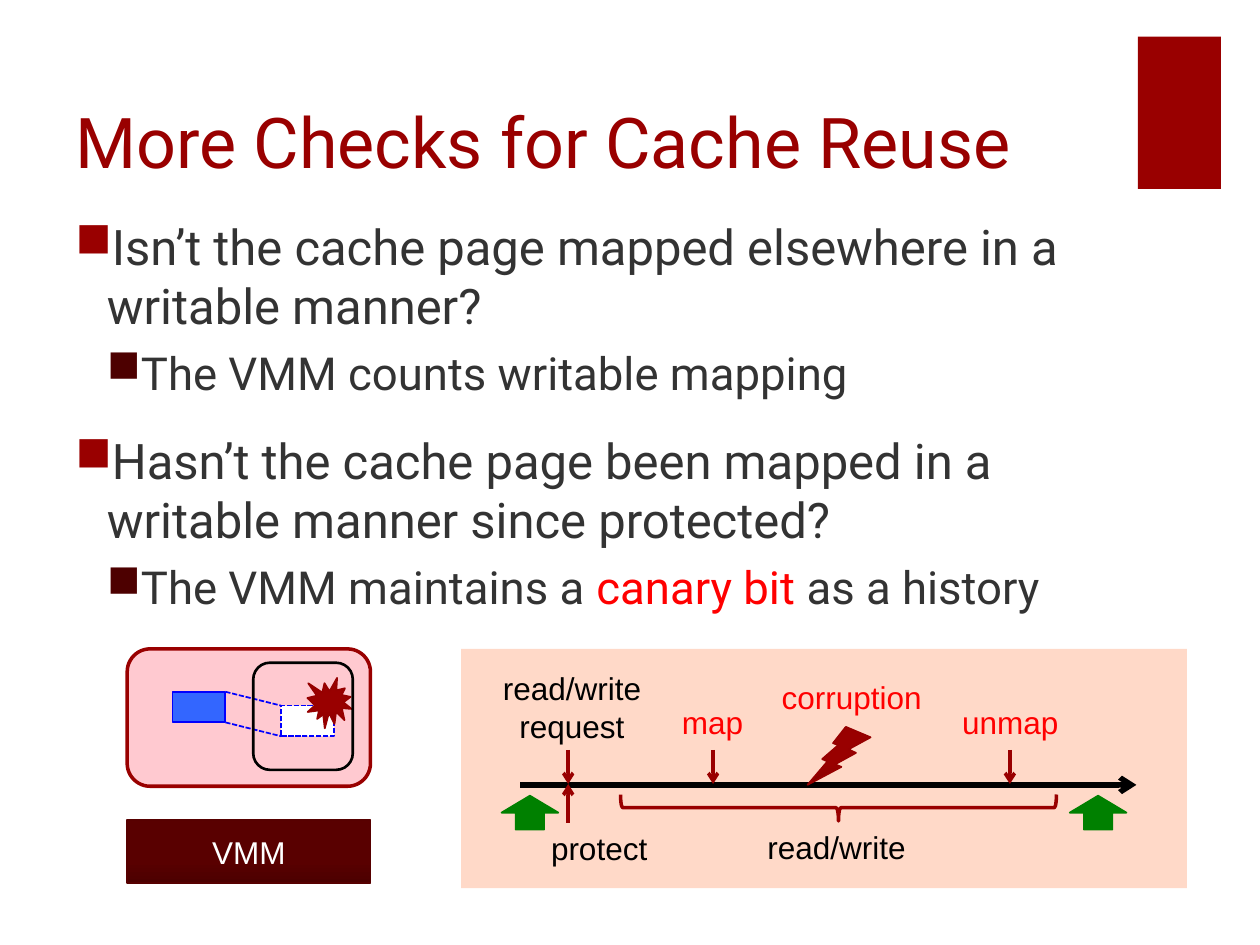
from dataclasses import dataclass
from typing import Optional

import pptx
import pptx.dml.color
import pptx.enum.dml
import pptx.enum.shapes
import pptx.enum.text
import pptx.oxml
import pptx.oxml.ns
import pptx.util

Pt = pptx.util.Pt
SHAPE = pptx.enum.shapes.MSO_SHAPE
ANCHOR = pptx.enum.text.MSO_ANCHOR
ALIGN = pptx.enum.text.PP_ALIGN
DASH = pptx.enum.dml.MSO_LINE.SQUARE_DOT  # written as sysDash

COLORS = {
    "crimson": "990000", "crimson_dark": "830000", "crimson_edge": "960000",
    "maroon": "590000", "maroon_dark": "4C0000", "maroon_edge": "570000",
    "sub_bullet": "4D0000", "body": "333333", "red": "FF0000",
    "black": "000000", "white": "FFFFFF", "pink": "FFC9D0", "peach": "FFD9C8",
    "page": "3366FF", "blue": "0000FF", "green": "008000",
}


@dataclass
class Box:
    left: float
    top: float
    width: float
    height: float

    def emu(self) -> tuple:
        return Pt(self.left), Pt(self.top), Pt(self.width), Pt(self.height)


@dataclass
class Point:
    text: str
    level: int = 0
    highlight: str = ""
    rest: str = ""


@dataclass
class Label:
    text: str
    center: float
    top: float
    color: str = "black"


@dataclass
class Line:
    x1: float
    y1: float
    x2: float
    y2: float
    color: str = "crimson"
    weight: float = 2
    arrow: bool = True


def rgb(name: str) -> pptx.dml.color.RGBColor:
    return pptx.dml.color.RGBColor.from_string(COLORS[name])


def add_run(paragraph, text: str, *, size: float, color: str, font: str = "Arial") -> None:
    run = paragraph.add_run()
    run.text = text
    run.font.size = Pt(size)
    run.font.name = font
    run.font.color.rgb = rgb(color)


def add_shape(slide, kind, box: Box, fill=None, line: Optional[str] = None,
              weight: float = 1, dash=None):
    """Draw a preset shape; a pair of colours as fill makes a gradient."""
    shape = slide.shapes.add_shape(kind, *box.emu())
    shape.shadow.inherit = False
    if fill is None:
        shape.fill.background()
    elif isinstance(fill, tuple):
        shape.fill.gradient()
        shape.fill.gradient_angle = 90
        for stop, color, position in zip(shape.fill.gradient_stops, fill, (0, 0.35)):
            stop.color.rgb = rgb(color)
            stop.position = position
    else:
        shape.fill.solid()
        shape.fill.fore_color.rgb = rgb(fill)
    if line is None:
        shape.line.fill.background()
    else:
        shape.line.color.rgb = rgb(line)
        shape.line.width = Pt(weight)
        shape.line.dash_style = dash
    return shape


def add_line(slide, line: Line, dash=None) -> None:
    connector = slide.shapes.add_connector(
        pptx.enum.shapes.MSO_CONNECTOR.STRAIGHT,
        Pt(line.x1), Pt(line.y1), Pt(line.x2), Pt(line.y2))
    connector.line.color.rgb = rgb(line.color)
    connector.line.width = Pt(line.weight)
    connector.line.dash_style = dash
    if line.arrow:
        tail = pptx.oxml.parse_xml(
            f'<a:tailEnd {pptx.oxml.ns.nsdecls("a")} type="arrow"/>')
        connector.line._get_or_add_ln().append(tail)
    connector._element.spPr.append(
        pptx.oxml.parse_xml(f'<a:effectLst {pptx.oxml.ns.nsdecls("a")}/>'))


def add_label(slide, label: Label) -> None:
    lines = label.text.split("\n")
    width = 108
    box = Box(label.center - width / 2, label.top, width, 7.2 + 21.6 * len(lines))
    frame = slide.shapes.add_textbox(*box.emu()).text_frame
    frame.word_wrap = False
    for i, text in enumerate(lines):
        paragraph = frame.add_paragraph() if i else frame.paragraphs[0]
        paragraph.alignment = ALIGN.CENTER
        add_run(paragraph, text, size=18, color=label.color)


def set_bullet(paragraph, level: int, color: str) -> None:
    properties = paragraph._p.get_or_add_pPr()
    properties.set("marL", str(Pt(18 * (level + 1))))
    properties.set("indent", str(-Pt(18)))
    namespace = pptx.oxml.ns.nsdecls("a")
    for xml in (f'<a:buClr {namespace}><a:srgbClr val="{COLORS[color]}"/></a:buClr>',
                f'<a:buChar {namespace} char="■"/>'):
        properties.append(pptx.oxml.parse_xml(xml))


def add_points(slide, box: Box, points: list[Point]) -> None:
    frame = slide.shapes.add_textbox(*box.emu()).text_frame
    frame.word_wrap = True
    for i, point in enumerate(points):
        paragraph = frame.add_paragraph() if i else frame.paragraphs[0]
        paragraph.level = point.level
        paragraph.space_before = Pt(6 if point.level else 18)
        set_bullet(paragraph, point.level, "sub_bullet" if point.level else "crimson")
        for text, color in ((point.text, "body"), (point.highlight, "red"),
                            (point.rest, "body")):
            if text:
                add_run(paragraph, text, size=28 - 2 * point.level, color=color,
                        font="Roboto")


def draw_memory(slide) -> None:
    # VMM below the guest
    vmm = add_shape(slide, SHAPE.RECTANGLE, Box(72.7, 468.7, 139, 36),
                    ("maroon_dark", "maroon"), "maroon_edge")
    vmm.text_frame.vertical_anchor = ANCHOR.MIDDLE
    vmm.text_frame.paragraphs[0].alignment = ALIGN.CENTER
    add_run(vmm.text_frame.paragraphs[0], "VMM", size=18, color="white")
    add_shape(slide, SHAPE.ROUNDED_RECTANGLE, Box(72.7, 370.8, 139, 78.5),
              "pink", "crimson", 2)
    # Cache page and its mapping into the process
    page = Box(98.6, 395.3, 30.2, 17.5)
    mapped = Box(160.6, 403.2, 30.2, 17.5)
    add_shape(slide, SHAPE.RECTANGLE, page, "page", "blue")
    add_shape(slide, SHAPE.RECTANGLE, mapped, "white", "blue", dash=DASH)
    for offset in (0, page.height):
        add_line(slide, Line(page.left + page.width, page.top + offset,
                             mapped.left, mapped.top + offset, "blue", 1, False), DASH)
    add_shape(slide, SHAPE.EXPLOSION1, Box(175.7, 387.4, 25.2, 28.8),
              ("crimson_dark", "crimson"), "crimson_edge")
    add_shape(slide, SHAPE.ROUNDED_RECTANGLE, Box(144.7, 378.7, 56.9, 61.2),
              line="black", weight=1.5)


def draw_timeline(slide) -> None:
    axis = 448.5
    add_shape(slide, SHAPE.RECTANGLE, Box(263.5, 370.8, 414.7, 136.8), "peach")
    add_line(slide, Line(297.4, axis, 649.4, axis, "black", 3))
    # Events on the axis
    for x in (324.7, 407.5, 577.1):
        add_line(slide, Line(x, axis - 20, x, axis - 0.5))
    add_line(slide, Line(324.7, 470.2, 324.7, axis - 0.5))
    bolt = add_shape(slide, SHAPE.LIGHTNING_BOLT, Box(461.5, 415.4, 36, 33.1),
                     ("crimson_dark", "crimson"), "crimson_edge")
    bolt._element.spPr.xfrm.set("flipH", "1")
    # Span of the reads and writes
    brace = add_shape(slide, SHAPE.LEFT_BRACE, Box(471.6, 337, 15.1, 249.1),
                      line="crimson", weight=2)
    brace.rotation = 270
    for label in (Label("read/write\nrequest", 326.9, 378.7),
                  Label("protect", 342.4, 470.2),
                  Label("read/write", 478.1, 469.4),
                  Label("corruption", 486.7, 383.8, "red"),
                  Label("map", 407.2, 398.2, "red"),
                  Label("unmap", 577.4, 398.2, "red")):
        add_label(slide, label)
    # Check points at both ends
    for left in (286.6, 611.3):
        add_shape(slide, SHAPE.UP_ARROW, Box(left, 454.7, 32.4, 19.4), "green", "green")


def main() -> None:
    deck = pptx.Presentation()
    deck.slide_width, deck.slide_height = Pt(720), Pt(540)
    slide = deck.slides.add_slide(deck.slide_layouts[6])
    add_shape(slide, SHAPE.RECTANGLE, Box(650.2, 20.9, 47.5, 87.1), "crimson")
    # Title and points
    title = slide.shapes.add_textbox(*Box(36, 18, 606.2, 90).emu()).text_frame
    title.word_wrap = True
    title.vertical_anchor = ANCHOR.BOTTOM
    add_run(title.paragraphs[0], "More Checks for Cache Reuse", size=40,
            color="crimson", font="Roboto")
    add_points(slide, Box(36, 120.2, 642.2, 380.2), [
        Point("Isn’t the cache page mapped elsewhere in a writable manner?"),
        Point("The VMM counts writable mapping", 1),
        Point("Hasn’t the cache page been mapped in a writable manner since protected?"),
        Point("The VMM maintains a ", 1, "canary bit", " as a history")])
    draw_memory(slide)
    draw_timeline(slide)
    deck.save("out.pptx")


if __name__ == "__main__":
    main()
